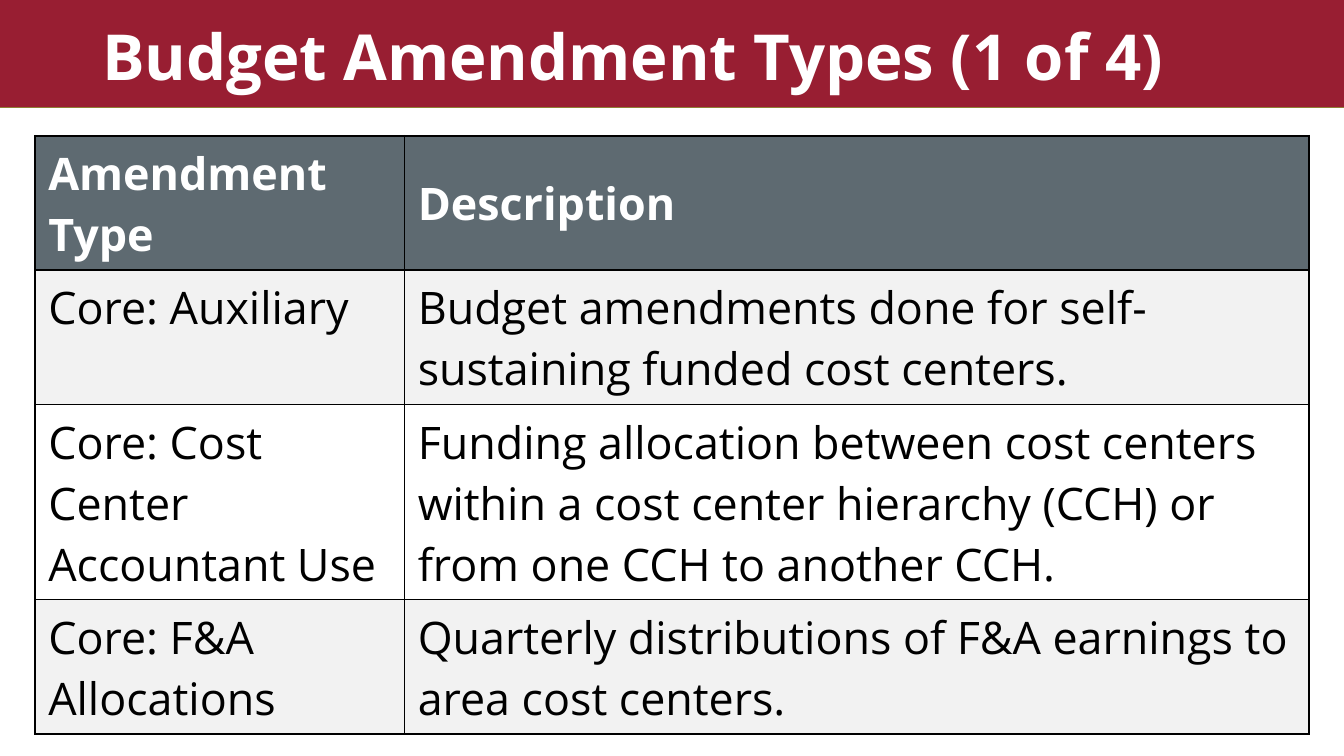
from lxml.etree import SubElement
from pptx import Presentation
from pptx.dml.color import RGBColor
from pptx.enum.shapes import MSO_CONNECTOR, MSO_SHAPE
from pptx.enum.text import MSO_ANCHOR, MSO_AUTO_SIZE, PP_ALIGN
from pptx.oxml.ns import qn
from pptx.util import Inches, Pt

WIDTH = 10
HEIGHT = WIDTH * 9 / 16
MARGIN = 0.26
BAND_HEIGHT = 0.8
FONT = "Open Sans"
ROWS = [
    ("Amendment Type", "Description"),
    ("Core: Auxiliary",
     "Budget amendments done for self-sustaining funded cost centers."),
    ("Core: Cost Center Accountant Use",
     "Funding allocation between cost centers within a cost center "
     "hierarchy (CCH) or from one CCH to another CCH."),
    ("Core: F&A Allocations",
     "Quarterly distributions of F&A earnings to area cost centers."),
]
LINES_PER_ROW = (2, 2, 3, 2)
LINE_HEIGHT, CELL_PADDING = 0.45, 0.1
COLUMN_SHARES = (0.29, 0.71)


def colour(value):
    return RGBColor.from_string(value)


def style_font(font, size, value, bold):
    font.name, font.size, font.bold = FONT, Pt(size), bold
    font.color.rgb = colour(value)


def add_header(page, left, top, width, height):
    band = page.shapes.add_shape(
        MSO_SHAPE.RECTANGLE, *map(Inches, (left, top, width, height)))
    band.shadow.inherit = False
    band.fill.solid()
    band.fill.fore_color.rgb = colour("981E32")
    band.line.fill.background()

    bottom = top + height
    rule = page.shapes.add_connector(
        MSO_CONNECTOR.STRAIGHT,
        *map(Inches, (left, bottom, left + width, bottom)))
    rule.line.color.rgb = colour("8F7E35")
    rule.line.width = Pt(1)
    SubElement(rule._element.spPr, qn("a:effectLst"))

    title = page.shapes.title
    band._element.getparent().append(title._element)  # in front of the band
    title.left, title.top = Inches(left + MARGIN), Inches(top + 0.13)
    title.width, title.height = Inches(width), Inches(0.62)
    frame = title.text_frame
    frame.text = "Budget Amendment Types (1 of 4)"
    frame.word_wrap = True
    frame.auto_size = MSO_AUTO_SIZE.SHAPE_TO_FIT_TEXT
    frame.vertical_anchor = MSO_ANCHOR.BOTTOM
    frame.margin_left = frame.margin_right = Inches(0.5)
    frame.margin_top = frame.margin_bottom = Inches(0.05)
    para = frame.paragraphs[0]
    para.alignment = PP_ALIGN.LEFT
    para.line_spacing = 0.9
    style_font(para.font, 34, "FFFFFF", True)


def add_borders(cell):
    """Outline a cell; border elements must come before its fill."""
    properties = cell._tc.get_or_add_tcPr()
    for side in ("lnL", "lnR", "lnT", "lnB"):
        line = SubElement(properties, qn(f"a:{side}"), w=str(Pt(1)))
        fill = SubElement(line, qn("a:solidFill"))
        SubElement(fill, qn("a:srgbClr"), val="000000")


def fill_cell(cell, text, row):
    heading = row == 0
    add_borders(cell)
    cell.fill.solid()
    cell.fill.fore_color.rgb = colour(
        "5E6A71" if heading else "F2F2F2" if row % 2 else "FFFFFF")
    cell.vertical_anchor = MSO_ANCHOR.MIDDLE if heading else MSO_ANCHOR.TOP
    cell.text = text
    style_font(cell.text_frame.paragraphs[0].font, 24,
               "FFFFFF" if heading else "000000", heading)


def add_amendment_table(page, left, top, width):
    heights = [CELL_PADDING + LINE_HEIGHT * lines for lines in LINES_PER_ROW]
    table = page.shapes.add_table(
        len(ROWS), len(COLUMN_SHARES),
        *map(Inches, (left, top, width, sum(heights)))).table
    for column, share in zip(table.columns, COLUMN_SHARES):
        column.width = Inches(width * share)
    for index, (height, texts) in enumerate(zip(heights, ROWS)):
        table.rows[index].height = Inches(height)
        for column, text in enumerate(texts):
            fill_cell(table.cell(index, column), text, index)


def main():
    deck = Presentation()
    deck.slide_width, deck.slide_height = Inches(WIDTH), Inches(HEIGHT)
    page = deck.slides.add_slide(deck.slide_layouts.get_by_name("Title Only"))
    add_header(page, 0, 0, WIDTH, BAND_HEIGHT)
    add_amendment_table(page, MARGIN, 1.01, WIDTH - 2 * MARGIN)
    deck.save("out.pptx")


if __name__ == "__main__":
    main()
